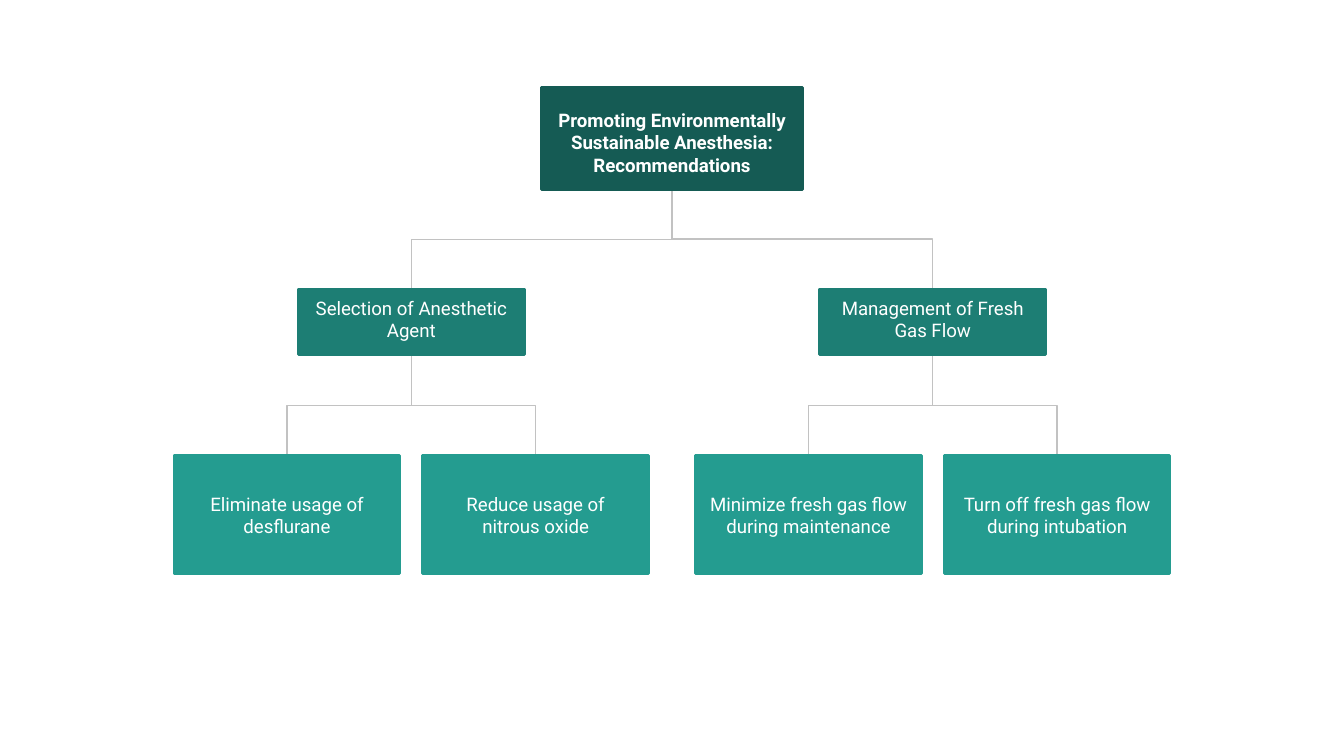
import pptx
import pptx.dml.color
import pptx.enum.shapes
import pptx.enum.text
import pptx.oxml.ns
import pptx.util
from lxml import etree
from pptx.util import Inches

COLORS = {
    "root": "155B54",
    "branch": "1D7E74",
    "leaf": "249C90",
    "line": "C2C2C2",
    "text": "FFFFFF",
}
# level: top, width, height
LEVELS = {
    "root": (0.65, 1.94, 0.76),
    "branch": (2.15, 1.68, 0.49),
    "leaf": (3.39, 1.68, 0.88),
}
CENTER = 5
BRANCH_SPACING = 3.88
LEAF_SPACING = 1.85
TITLE = "Promoting Environmentally Sustainable Anesthesia: Recommendations"
BRANCHES = [
    ("Selection of Anesthetic Agent",
     ["Eliminate usage of desflurane", "Reduce usage of nitrous oxide"]),
    ("Management of Fresh Gas Flow",
     ["Minimize fresh gas flow during maintenance",
      "Turn off fresh gas flow during intubation"]),
]


def rgb(name):
    return pptx.dml.color.RGBColor.from_string(COLORS[name])


class TreeChart:
    """Holds the chart style and the slide it is drawn on."""

    font = "Roboto"
    size = pptx.util.Pt(10)

    def __init__(self, slide):
        self.slide = slide

    def box(self, level, center, text):
        top, width, height = LEVELS[level]
        box = self.slide.shapes.add_shape(
            pptx.enum.shapes.MSO_SHAPE.RECTANGLE,
            Inches(center - width / 2), Inches(top), Inches(width), Inches(height))
        box.shadow.inherit = False
        box.fill.solid()
        box.fill.fore_color.rgb = rgb(level)
        box.line.color.rgb = rgb(level)
        box.line.width = pptx.util.Pt(1.5)

        frame = box.text_frame
        frame.word_wrap = True
        frame.margin_left = frame.margin_right = Inches(0.1)
        frame.margin_top = frame.margin_bottom = Inches(0.1)
        anchors = pptx.enum.text.MSO_ANCHOR
        frame.vertical_anchor = anchors.MIDDLE if level == "leaf" else anchors.BOTTOM
        para = frame.paragraphs[0]
        para.alignment = pptx.enum.text.PP_ALIGN.CENTER
        span = para.add_run()
        span.text = text
        span.font.name = self.font
        span.font.size = self.size
        span.font.bold = level == "root"
        span.font.color.rgb = rgb("text")
        return box

    def link(self, parent, child):
        """Join parent to child with an elbow that leaves and arrives vertically."""
        start_x = parent.left + parent.width // 2
        end_x = child.left + child.width // 2
        start_y, end_y = parent.top + parent.height, child.top
        # The elbow is turned by 270 degrees, so its frame has the sides swapped.
        width, height = end_y - start_y, abs(end_x - start_x)
        left = (start_x + end_x - width) // 2
        top = (start_y + end_y - height) // 2
        line = self.slide.shapes.add_connector(
            pptx.enum.shapes.MSO_CONNECTOR.ELBOW,
            left, top, left + width, top + height)
        line.line.color.rgb = rgb("line")
        line.line.width = pptx.util.Pt(0.75)

        properties = line._element.spPr
        frame = properties.find(pptx.oxml.ns.qn("a:xfrm"))
        frame.set("rot", "16200000")
        if end_x > start_x:
            frame.set("flipH", "1")
        etree.SubElement(properties, pptx.oxml.ns.qn("a:effectLst"))
        # Lines lie behind the boxes, after the two header elements of the tree.
        self.slide.shapes._spTree.insert(2, line._element)


def main():
    deck = pptx.Presentation()
    deck.slide_width = Inches(10)
    deck.slide_height = deck.slide_width * 9 // 16
    chart = TreeChart(deck.slides.add_slide(deck.slide_layouts[6]))

    root = chart.box("root", CENTER, TITLE)
    for side, (heading, leaves) in zip((-0.5, 0.5), BRANCHES):
        branch_center = CENTER + side * BRANCH_SPACING
        branch = chart.box("branch", branch_center, heading)
        chart.link(root, branch)
        for leaf_side, text in zip((-0.5, 0.5), leaves):
            leaf = chart.box("leaf", branch_center + leaf_side * LEAF_SPACING, text)
            chart.link(branch, leaf)

    deck.save("out.pptx")


if __name__ == "__main__":
    main()
